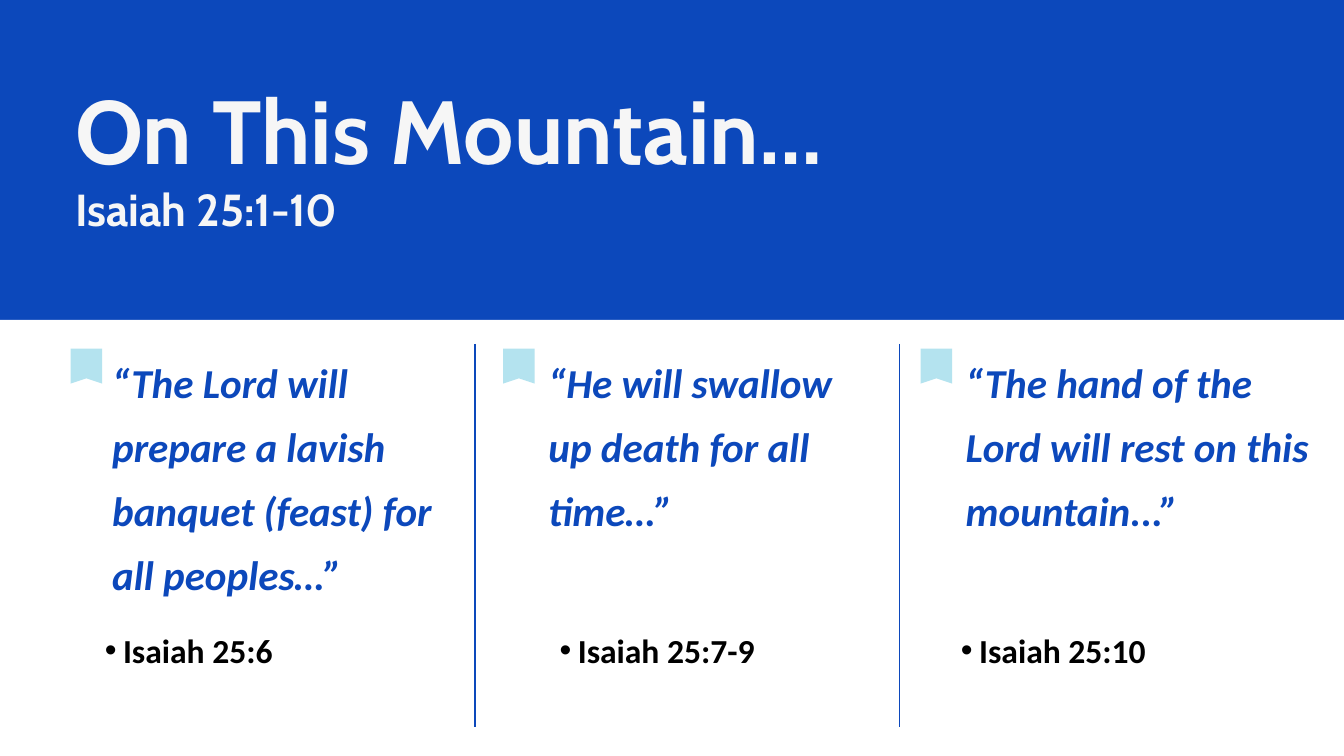
from dataclasses import dataclass

from lxml import etree
from pptx import Presentation
from pptx.dml.color import RGBColor
from pptx.enum.shapes import MSO_CONNECTOR, MSO_SHAPE
from pptx.enum.text import MSO_ANCHOR, MSO_AUTO_SIZE, PP_ALIGN
from pptx.oxml.ns import qn
from pptx.util import Cm, Pt

STRAIGHT = MSO_CONNECTOR.STRAIGHT
RECTANGLE = MSO_SHAPE.RECTANGLE
TOP = MSO_ANCHOR.TOP
NO_AUTOFIT = MSO_AUTO_SIZE.NONE
LEFT = PP_ALIGN.LEFT
COMPARISON_LAYOUT = 4


@dataclass(frozen=True)
class Theme:
    blue: RGBColor = RGBColor(0x0C, 0x48, 0xBB)
    white: RGBColor = RGBColor(0xFF, 0xFF, 0xFF)
    off_white: RGBColor = RGBColor(0xF6, 0xF6, 0xF6)
    pale_blue: RGBColor = RGBColor(0xB4, 0xE3, 0xEF)
    black: RGBColor = RGBColor(0, 0, 0)
    heading_font: str = "Cabin"
    body_font: str = "Calibri"
    title_size: int = 96
    subtitle_size: int = 48
    quote_size: int = 44
    reference_size: int = 36


THEME = Theme()
TITLE_FORMAT = {"name": THEME.heading_font, "size": Pt(THEME.title_size),
                "bold": True, "italic": False}
SUBTITLE_FORMAT = {**TITLE_FORMAT, "size": Pt(THEME.subtitle_size)}
QUOTE_FORMAT = {"name": THEME.body_font, "size": Pt(THEME.quote_size),
                "bold": True, "italic": True}
REFERENCE_FORMAT = {"name": THEME.body_font, "size": Pt(THEME.reference_size),
                    "bold": True, "italic": False}

# Each box is (left, top, width, height) in centimetres
TITLE_BOX = (2.84, 2.82, 32.79, 6.15)
DIVIDERS = (17.96, 33.99)
COLUMNS = [
    {"marker_left": 2.67,
     "quote": "“The Lord will prepare a lavish banquet (feast) for all peoples…”",
     "quote_box": (4.24, 12.95, 12.78, 9.78),
     "reference": "Isaiah 25:6", "reference_box": (3.28, 23.19, 14.27, 2.16)},
    {"marker_left": 19.02,
     "quote": "“He will swallow up death for all time…”",
     "quote_box": (20.73, 12.95, 12.19, 7.34),
     "reference": "Isaiah 25:7-9", "reference_box": (20.47, 23.19, 12.98, 2.16)},
    {"marker_left": 34.8,
     "quote": "“The hand of the Lord will rest on this mountain...”",
     "quote_box": (36.5, 12.95, 13.51, 7.34),
     "reference": "Isaiah 25:10", "reference_box": (35.64, 23.19, 12.42, 2.16)},
]


def paint(shape, color):
    shape.shadow.inherit = False
    shape.fill.solid()
    shape.fill.fore_color.rgb = color
    shape.line.fill.background()


def add_band(slide, top, height, color):
    band = slide.shapes.add_shape(RECTANGLE, 0, Cm(top), Cm(50.8), Cm(height))
    paint(band, color)


def add_divider(slide, left):
    divider = slide.shapes.add_connector(STRAIGHT, Cm(left), Cm(13), Cm(left), Cm(27.48))
    divider.line.color.rgb = THEME.blue
    divider.line.width = Pt(1.5)
    etree.SubElement(divider.element.spPr, qn("a:effectLst"))


def add_marker(slide, left, top=13.18, width=1.19, height=1.32, notch=1.12):
    """Bookmark ribbon with a notch in its lower edge."""
    builder = slide.shapes.build_freeform(Cm(left), Cm(top))
    corners = [(width, 0), (width, height), (width / 2, notch), (0, height)]
    builder.add_line_segments([(Cm(left + x), Cm(top + y)) for x, y in corners])
    paint(builder.convert_to_shape(), THEME.pale_blue)


def place(shape, box):
    shape.left, shape.top, shape.width, shape.height = map(Cm, box)
    frame_format = {"margin_left": 0, "margin_top": 0, "margin_right": 0,
                    "margin_bottom": 0, "word_wrap": True,
                    "auto_size": NO_AUTOFIT, "vertical_anchor": TOP}
    for name, value in frame_format.items():
        setattr(shape.text_frame, name, value)


def write(paragraph, text, font_format, color, line_spacing=1.0):
    paragraph_format = {"alignment": LEFT, "line_spacing": line_spacing,
                        "space_before": Pt(0), "space_after": Pt(0)}
    for name, value in paragraph_format.items():
        setattr(paragraph, name, value)
    run = paragraph.add_run()
    run.text = text
    for name, value in font_format.items():
        setattr(run.font, name, value)
    run.font.color.rgb = color


def add_bullet(paragraph, color):
    properties = paragraph._p.get_or_add_pPr()
    properties.set("marL", str(Cm(1.37)))
    properties.set("indent", str(-Cm(0.69)))
    bullet_color = etree.SubElement(properties, qn("a:buClr"))
    etree.SubElement(bullet_color, qn("a:srgbClr"), val=str(color))
    etree.SubElement(properties, qn("a:buFont"), typeface="Arial")
    etree.SubElement(properties, qn("a:buChar"), char="•")


def bring_to_front(shape):
    shape.element.getparent().append(shape.element)


def fill_title(title):
    place(title, TITLE_BOX)
    frame = title.text_frame
    write(frame.paragraphs[0], "On This Mountain…", TITLE_FORMAT, THEME.off_white)
    write(frame.add_paragraph(), "Isaiah 25:1-10", SUBTITLE_FORMAT, THEME.off_white)
    bring_to_front(title)


def fill_reference(placeholder, text, box):
    place(placeholder, box)
    paragraph = placeholder.text_frame.paragraphs[0]
    paragraph.level = 1
    write(paragraph, text, REFERENCE_FORMAT, THEME.black, 1.4)
    add_bullet(paragraph, THEME.black)
    bring_to_front(placeholder)


def add_quote(slide, text, box):
    quote = slide.shapes.add_textbox(*map(Cm, box))
    place(quote, box)
    write(quote.text_frame.paragraphs[0], text, QUOTE_FORMAT, THEME.blue, 1.3)


def main():
    presentation = Presentation()
    presentation.slide_width = Cm(50.8)
    presentation.slide_height = Cm(28.575)
    slide = presentation.slides.add_slide(presentation.slide_layouts[COMPARISON_LAYOUT])
    title, *bodies = list(slide.placeholders)

    # Background bands
    add_band(slide, 0, 28.78, THEME.blue)
    add_band(slide, 12.09, 16.69, THEME.white)

    # Heading
    fill_title(title)

    # Three columns with dividers between them
    for left in DIVIDERS:
        add_divider(slide, left)
    for column, body in zip(COLUMNS, bodies):
        add_marker(slide, column["marker_left"])
        fill_reference(body, column["reference"], column["reference_box"])
        add_quote(slide, column["quote"], column["quote_box"])

    # Unused placeholders
    for body in bodies[len(COLUMNS):]:
        body.element.getparent().remove(body.element)

    presentation.save("out.pptx")


if __name__ == "__main__":
    main()
